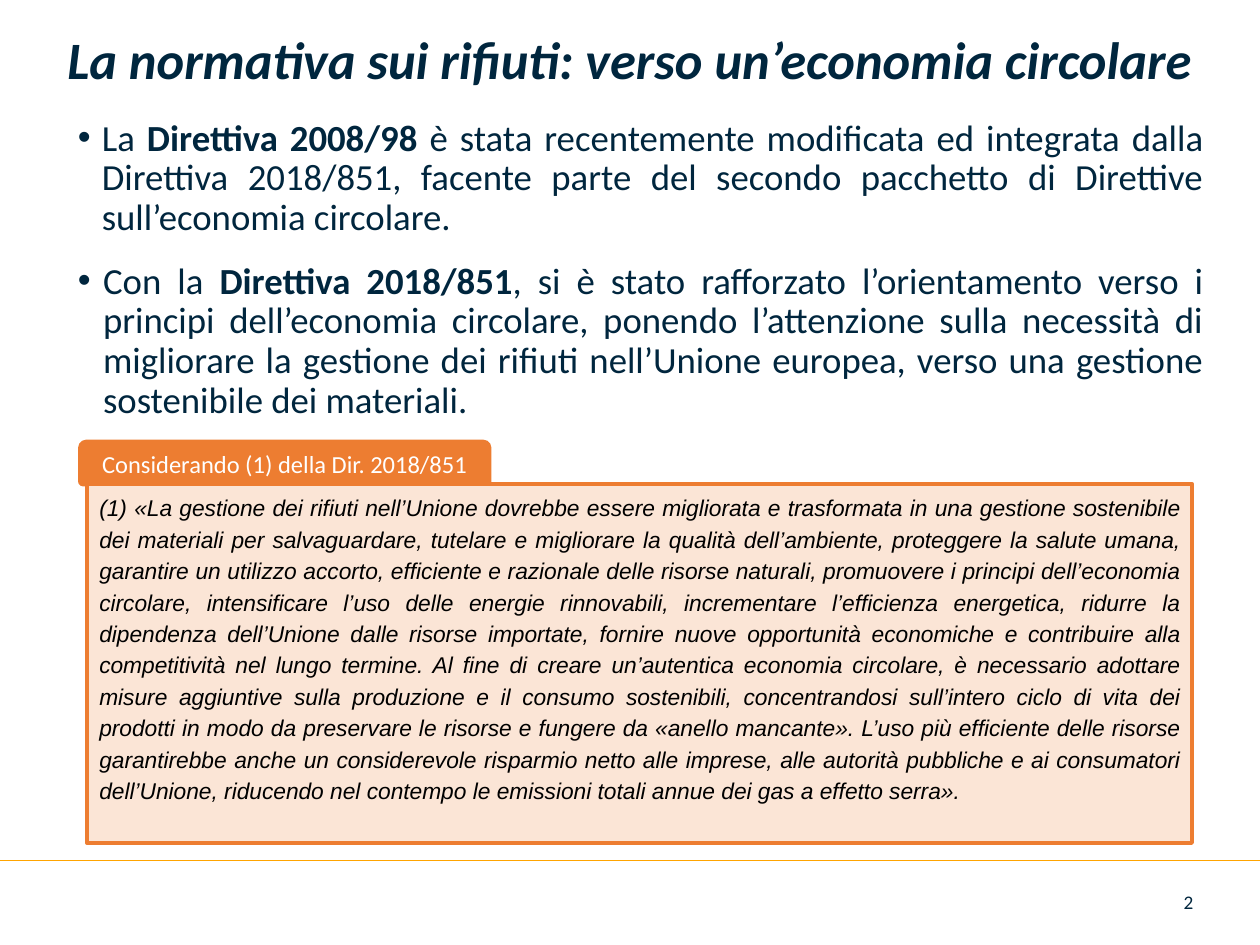
from dataclasses import dataclass

from lxml import etree
from pptx import Presentation
from pptx.dml.color import RGBColor
from pptx.enum import shapes as kinds, text as txt
from pptx.oxml.ns import qn
from pptx.util import Inches, Pt


@dataclass(frozen=True)
class Theme:
    navy: str = "00263E"
    orange: str = "ED7D31"
    peach: str = "FBE5D6"
    gold: str = "FFA400"
    white: str = "FFFFFF"
    black: str = "000000"
    main_font: str = "Calibri"
    quote_font: str = "Arial"
    title_size: float = 30
    body_size: float = 21
    label_size: float = 14
    quote_size: float = 13
    number_size: float = 11


@dataclass(frozen=True)
class Box:
    left: float
    top: float
    width: float
    height: float

    def lengths(self) -> tuple:
        return tuple(Inches(v) for v in (self.left, self.top, self.width, self.height))


@dataclass(frozen=True)
class Style:
    size: float
    color: str
    font: str = Theme.main_font
    italic: bool = False


@dataclass(frozen=True)
class Point:
    """A bullet point: plain opening, bold directive name, plain remainder."""
    opening: str
    directive: str
    remainder: str
    indent: float


THEME = Theme()

TITLE = "La normativa sui rifiuti: verso un’economia circolare"
POINTS = [
    Point("La ", "Direttiva 2008/98",
          " è stata recentemente modificata ed integrata dalla Direttiva 2018/851, "
          "facente parte del secondo pacchetto di Direttive sull’economia circolare.", 0.19),
    Point("Con la ", "Direttiva 2018/851",
          ", si è stato rafforzato l’orientamento verso i principi dell’economia circolare, "
          "ponendo l’attenzione sulla necessità di migliorare la gestione dei rifiuti "
          "nell’Unione europea, verso una gestione sostenibile dei materiali.", 0.2),
]
RECITAL_LABEL = "Considerando (1) della Dir. 2018/851"
RECITAL_SENTENCES = [
    "(1) «La gestione dei rifiuti nell’Unione dovrebbe essere migliorata e trasformata in una "
    "gestione sostenibile dei materiali per salvaguardare, tutelare e migliorare la qualità "
    "dell’ambiente, proteggere la salute umana, garantire un utilizzo accorto, efficiente e "
    "razionale delle risorse naturali, promuovere i principi dell’economia circolare, "
    "intensificare l’uso delle energie rinnovabili, incrementare l’efficienza energetica, "
    "ridurre la dipendenza dell’Unione dalle risorse importate, fornire nuove opportunità "
    "economiche e contribuire alla competitività nel lungo termine.",
    "Al fine di creare un’autentica economia circolare, è necessario adottare misure aggiuntive "
    "sulla produzione e il consumo sostenibili, concentrandosi sull’intero ciclo di vita dei "
    "prodotti in modo da preservare le risorse e fungere da «anello mancante».",
    "L’uso più efficiente delle risorse garantirebbe anche un considerevole risparmio netto alle "
    "imprese, alle autorità pubbliche e ai consumatori dell’Unione, riducendo nel contempo le "
    "emissioni totali annue dei gas a effetto serra».",
]


def rgb(color: str) -> RGBColor:
    return RGBColor.from_string(color)


def add_run(paragraph, words: str, style: Style, bold: bool = False) -> None:
    run = paragraph.add_run()
    run.text = words
    font = run.font
    font.name, font.size = style.font, Pt(style.size)
    font.bold, font.italic = bold, style.italic
    font.color.rgb = rgb(style.color)


def set_frame(shape, anchor):
    frame = shape.text_frame
    frame.word_wrap = True
    frame.auto_size = txt.MSO_AUTO_SIZE.NONE
    frame.vertical_anchor = anchor
    return frame


def add_title(slide, box: Box) -> None:
    title = slide.shapes.title
    title.left, title.top, title.width, title.height = box.lengths()
    frame = set_frame(title, txt.MSO_ANCHOR.MIDDLE)
    frame.margin_left = frame.margin_right = frame.margin_top = frame.margin_bottom = 0
    heading = frame.paragraphs[0]
    heading.alignment = txt.PP_ALIGN.CENTER
    heading.line_spacing = 0.9
    add_run(heading, TITLE, Style(THEME.title_size, THEME.navy, italic=True), bold=True)


def add_bullet(paragraph, indent: float) -> None:
    props = paragraph._p.get_or_add_pPr()
    props.set("marL", str(Inches(indent)))
    props.set("indent", str(-Inches(indent)))
    etree.SubElement(props, qn("a:buFont")).set("typeface", "Arial")
    etree.SubElement(props, qn("a:buChar")).set("char", "•")


def add_points(slide, box: Box) -> None:
    frame = set_frame(slide.shapes.add_textbox(*box.lengths()), txt.MSO_ANCHOR.TOP)
    style = Style(THEME.body_size, THEME.navy)
    for index, point in enumerate(POINTS):
        paragraph = frame.add_paragraph() if index else frame.paragraphs[0]
        add_bullet(paragraph, point.indent)
        paragraph.alignment = txt.PP_ALIGN.JUSTIFY
        paragraph.line_spacing = 0.9
        paragraph.space_before = Pt(7.5 if index else 0)
        paragraph.space_after = Pt(6)
        add_run(paragraph, point.opening, style)
        add_run(paragraph, point.directive, style, bold=True)
        add_run(paragraph, point.remainder, style)


def add_panel(slide, kind, box: Box, fill: str, line: str | None = None):
    panel = slide.shapes.add_shape(kind, *box.lengths())
    panel.shadow.inherit = False
    panel.fill.solid()
    panel.fill.fore_color.rgb = rgb(fill)
    if line:
        panel.line.color.rgb = rgb(line)
        panel.line.width = Pt(2.25)
    else:
        panel.line.fill.background()
    return panel


def add_recital(slide, label_box: Box, quote_box: Box) -> None:
    label = add_panel(slide, kinds.MSO_SHAPE.ROUND_2_SAME_RECTANGLE, label_box, THEME.orange)
    label.adjustments[0], label.adjustments[1] = 0.17, 0.1
    caption = set_frame(label, txt.MSO_ANCHOR.MIDDLE).paragraphs[0]
    caption.alignment = txt.PP_ALIGN.CENTER
    add_run(caption, RECITAL_LABEL, Style(THEME.label_size, THEME.white))

    panel = add_panel(slide, kinds.MSO_SHAPE.RECTANGLE, quote_box, THEME.peach, THEME.orange)
    quote = set_frame(panel, txt.MSO_ANCHOR.TOP).paragraphs[0]
    quote.alignment = txt.PP_ALIGN.JUSTIFY
    quote.line_spacing = 1.15
    quote.space_after = Pt(3)
    add_run(quote, " ".join(RECITAL_SENTENCES),
            Style(THEME.quote_size, THEME.black, THEME.quote_font, italic=True))


def add_footer(slide, rule_top: float, number_box: Box) -> None:
    rule = slide.shapes.add_connector(kinds.MSO_CONNECTOR.STRAIGHT, 0, Inches(rule_top),
                                      Inches(10), Inches(rule_top))
    rule.line.color.rgb = rgb(THEME.gold)
    rule.line.width = Pt(0.5)
    etree.SubElement(rule._element.spPr, qn("a:effectLst"))

    number_frame = set_frame(slide.shapes.add_textbox(*number_box.lengths()),
                             txt.MSO_ANCHOR.MIDDLE)
    number = number_frame.paragraphs[0]
    number.alignment = txt.PP_ALIGN.RIGHT
    add_run(number, "2", Style(THEME.number_size, THEME.navy))


def main() -> None:
    deck = Presentation()
    deck.slide_width, deck.slide_height = Inches(10), Inches(7.5)
    slide = deck.slides.add_slide(deck.slide_layouts.get_by_name("Title Only"))
    add_title(slide, Box(0.44, 0.01, 9.12, 0.98))
    add_points(slide, Box(0.52, 0.9, 9.13, 5.1))
    add_footer(slide, 6.83, Box(9.11, 6.96, 0.46, 0.4))
    add_recital(slide, Box(0.62, 3.49, 3.28, 0.37), Box(0.69, 3.84, 8.77, 2.85))
    deck.save("out.pptx")


if __name__ == "__main__":
    main()
